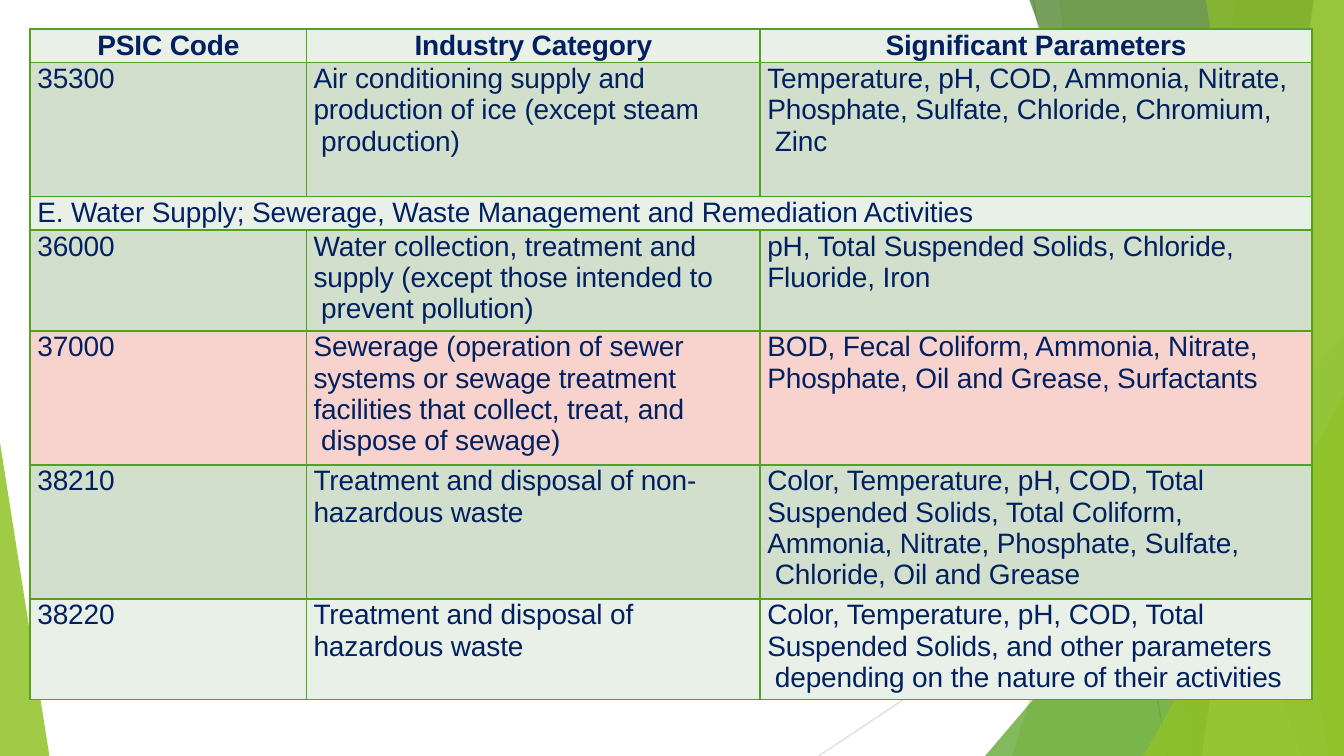
from lxml import etree
from pptx import Presentation
from pptx.dml.color import RGBColor
from pptx.enum import shapes, text
from pptx.oxml import ns
from pptx.util import Inches, Pt

SLIDE_W, SLIDE_H = 13.33, 7.5
BORDER, INK = "54A021", "002060"
PALE, SAGE, ROSE = "E9F0E8", "D1DFCC", "F8D2CC"

# Thin background lines: start, end, colour
RAYS = [
    ((10.25, 0), (11.58, 7.5), "BFBFBF"),
    ((13.33, 4.03), (8.12, 7.5), "D9D9D9"),
]

# Background facets: corner points, colour, opacity in percent
FACETS = [
    ([(13.33, 0), (12.28, 0), (10.04, 7.5), (13.33, 7.5)], "90C226", 30),
    ([(13.33, 0), (10.5, 0), (11.83, 7.5), (13.33, 7.5)], "90C226", 20),
    ([(13.33, 3.33), (9.77, 7.5), (13.33, 7.5)], "54A021", 72),
    ([(13.33, 0), (10.21, 0), (12.91, 7.5), (13.33, 7.5)], "3F7819", 70),
    ([(13.33, 0), (13.03, 0), (11.92, 7.5), (13.33, 7.5)], "C0E474", 70),
    ([(13.33, 0), (11.96, 0), (13.18, 7.5), (13.33, 7.5)], "90C226", 65),
    ([(13.33, 3.93), (11.34, 7.5), (13.33, 7.5)], "90C226", 80),
    ([(0, 4.39), (0, 7.5), (0.49, 7.5)], "90C226", 85),
]

COLUMN_WIDTHS = [2.74, 4.5, 5.47]

# Table rows: height, fill, cells (each cell is a list of paragraphs).
# \v breaks a line; a row with a single cell spans all columns.
ROWS = [
    (0.33, PALE, [["PSIC Code"], ["Industry Category"], ["Significant Parameters"]]),
    (1.33, SAGE, [
        ["35300"],
        ["Air conditioning supply and",
         "production of ice (except steam\v production)"],
        ["Temperature, pH, COD, Ammonia, Nitrate,",
         "Phosphate, Sulfate, Chloride, Chromium,\v Zinc"]]),
    (0.33, PALE, [
        ["E. Water Supply; Sewerage, Waste Management and Remediation Activities"]]),
    (1, SAGE, [
        ["36000"],
        ["Water collection, treatment and",
         "supply (except those intended to\v prevent pollution)"],
        ["pH, Total Suspended Solids, Chloride,", "Fluoride, Iron"]]),
    (1.33, ROSE, [
        ["37000"],
        ["Sewerage (operation of sewer",
         "systems or sewage treatment facilities that collect, treat, and"
         "\v dispose of sewage)"],
        ["BOD, Fecal Coliform, Ammonia, Nitrate,",
         "Phosphate, Oil and Grease, Surfactants"]]),
    (1.33, SAGE, [
        ["38210"],
        ["Treatment and disposal of non-", "hazardous waste"],
        ["Color, Temperature, pH, COD, Total",
         "Suspended Solids, Total Coliform, Ammonia, Nitrate, Phosphate, Sulfate,"
         "\v Chloride, Oil and Grease"]]),
    (1, PALE, [
        ["38220"],
        ["Treatment and disposal of", "hazardous waste"],
        ["Color, Temperature, pH, COD, Total",
         "Suspended Solids, and other parameters"
         "\v depending on the nature of their activities"]]),
]


def rgb(value):
    return RGBColor.from_string(value)


def add_ray(slide, start, end, color):
    ray = slide.shapes.add_connector(
        shapes.MSO_CONNECTOR.STRAIGHT, *map(Inches, start + end))
    ray.line.color.rgb = rgb(color)
    ray.line.width = Pt(0.75)
    etree.SubElement(ray._element.spPr, ns.qn("a:effectLst"))


def add_facet(slide, corners, color, opacity):
    points = [(Inches(x), Inches(y)) for x, y in corners]
    builder = slide.shapes.build_freeform(*points[0])
    builder.add_line_segments(points[1:], close=True)
    facet = builder.convert_to_shape()
    facet.shadow.inherit = False
    facet.line.fill.background()
    facet.fill.solid()
    facet.fill.fore_color.rgb = rgb(color)
    tint = facet._element.spPr.find(".//" + ns.qn("a:srgbClr"))
    etree.SubElement(tint, ns.qn("a:alpha"), val=str(opacity * 1000))


def set_borders(cell):
    properties = cell._tc.get_or_add_tcPr()
    for side in ("lnL", "lnR", "lnT", "lnB"):
        edge = etree.SubElement(properties, ns.qn("a:" + side), w=str(Pt(1.5)))
        solid = etree.SubElement(edge, ns.qn("a:solidFill"))
        etree.SubElement(solid, ns.qn("a:srgbClr"), val=BORDER)


def fill_cell(cell, paragraphs, is_header):
    cell.text_frame.text = "\n".join(paragraphs)
    for index, paragraph in enumerate(cell.text_frame.paragraphs):
        if index == 0:
            paragraph.line_spacing = Pt(22.9)
        if is_header:
            paragraph.alignment = text.PP_ALIGN.CENTER
        else:
            paragraph._p.get_or_add_pPr().set("marL", str(Inches(0.07)))
        for run in paragraph.runs:
            font_format = {"name": "Arial", "size": Pt(20), "bold": is_header}
            for name, value in font_format.items():
                setattr(run.font, name, value)
            run.font.color.rgb = rgb(INK)
            run._r.get_or_add_rPr().set("spc", "-10")


def add_parameter_table(slide):
    heights = [height for height, _, _ in ROWS]
    table = slide.shapes.add_table(
        len(ROWS), len(COLUMN_WIDTHS), Inches(0.3), Inches(0.29),
        Inches(sum(COLUMN_WIDTHS)), Inches(sum(heights))).table
    for column, width in zip(table.columns, COLUMN_WIDTHS):
        column.width = Inches(width)
    for index, (height, fill, contents) in enumerate(ROWS):
        row = table.rows[index]
        row.height = Inches(height)
        for cell in row.cells:
            for side in ("left", "right", "top", "bottom"):
                setattr(cell, "margin_" + side, 0)
            set_borders(cell)
            cell.fill.solid()
            cell.fill.fore_color.rgb = rgb(fill)
        if len(contents) == 1:
            row.cells[0].merge(row.cells[len(COLUMN_WIDTHS) - 1])
        for cell, paragraphs in zip(row.cells, contents):
            fill_cell(cell, paragraphs, is_header=index == 0)


def main():
    deck = Presentation()
    deck.slide_width, deck.slide_height = Inches(SLIDE_W), Inches(SLIDE_H)
    slide = deck.slides.add_slide(deck.slide_layouts[6])

    # Background decoration
    for ray in RAYS:
        add_ray(slide, *ray)
    for facet in FACETS:
        add_facet(slide, *facet)

    # Industry parameters
    add_parameter_table(slide)
    deck.save("out.pptx")


if __name__ == "__main__":
    main()
